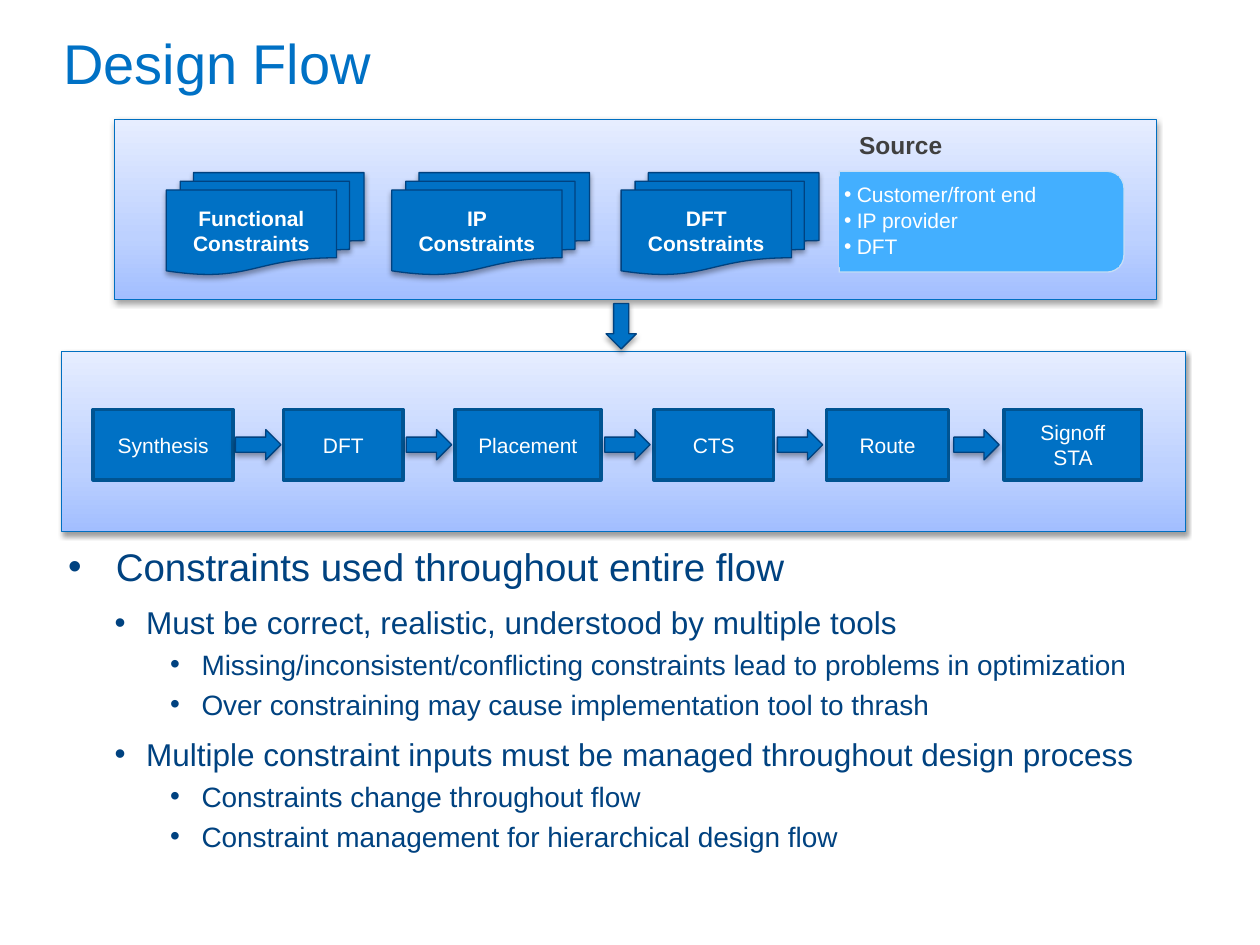
from lxml import etree
from pptx import Presentation
from pptx.dml.color import RGBColor
from pptx.enum.shapes import MSO_SHAPE
from pptx.enum.text import MSO_ANCHOR, PP_ALIGN
from pptx.oxml.ns import qn
from pptx.util import Inches, Pt

RECTANGLE = MSO_SHAPE.RECTANGLE
RIGHT_ARROW = MSO_SHAPE.RIGHT_ARROW
DOCUMENTS = MSO_SHAPE.FLOWCHART_MULTIDOCUMENT
ROUNDED_TOP = MSO_SHAPE.ROUND_2_SAME_RECTANGLE
TOP, MIDDLE = MSO_ANCHOR.TOP, MSO_ANCHOR.MIDDLE
LEFT, CENTER = PP_ALIGN.LEFT, PP_ALIGN.CENTER

FONT = "Arial"
COLORS = {
    "blue": "0071C5", "navy": "004280", "step_line": "005492",
    "panel_line": "006FC1", "sky": "43AFFF", "pale": "C6DEF5",
    "white": "FFFFFF", "gray": "404040", "black": "000000",
}
PANEL_GRADIENT = [(0, "A2BEFF"), (35, "BDD1FF"), (100, "E6EDFF")]

TITLE = "Design Flow"
PANELS = [(0.91, 0.95, 8.27, 1.43), (0.49, 2.79, 8.92, 1.43)]
STEPS = [
    (0.74, 1.11, ["Synthesis"]),
    (2.25, 0.95, ["DFT"]),
    (3.61, 1.16, ["Placement"]),
    (5.19, 0.95, ["CTS"]),
    (6.56, 0.97, ["Route"]),
    (7.97, 1.09, ["Signoff", "STA"]),
]
STEP_TOP, STEP_HEIGHT = 3.25, 0.56
ARROW_WIDTH, ARROW_HEIGHT = 0.36, 0.24
CONSTRAINTS = [
    (1.32, ["Functional Constraints"]),
    (3.11, ["IP", "Constraints"]),
    (4.93, ["DFT Constraints"]),
]
SOURCES = ["Customer/front end", "IP provider", "DFT"]
LEVELS = [
    {"size": 22, "margin": 0.38, "hanging": 0.38, "before": 12},
    {"size": 18, "margin": 0.62, "hanging": 0.25, "before": 8},
    {"size": 16, "margin": 1.06, "hanging": 0.25, "before": 3.7},
]
POINTS = [
    (0, "Constraints used throughout entire flow"),
    (1, "Must be correct, realistic, understood by multiple tools"),
    (2, "Missing/inconsistent/conflicting constraints lead to problems in optimization"),
    (2, "Over constraining may cause implementation tool to thrash"),
    (1, "Multiple constraint inputs must be managed throughout design process"),
    (2, "Constraints change throughout flow"),
    (2, "Constraint management for hierarchical design flow"),
]


def rgb(name):
    return RGBColor.from_string(COLORS[name])


def add_color(parent, value, alpha=None):
    color = etree.SubElement(parent, qn("a:srgbClr"), val=value)
    if alpha is not None:
        etree.SubElement(color, qn("a:alpha"), val=str(alpha * 1000))


def add_shadow(shape, alpha, distance):
    effects = shape._element.spPr.find(qn("a:effectLst"))
    shadow = etree.SubElement(
        effects, qn("a:outerShdw"), blurRad=str(Pt(3.1)), dist=str(Pt(distance)),
        dir="5400000", rotWithShape="0")
    add_color(shadow, COLORS["black"], alpha)


def add_shape(slide, kind, box, fill, line=None, width=0.75):
    shape = slide.shapes.add_shape(kind, *map(Inches, box))
    shape.shadow.inherit = False
    shape.fill.solid()
    shape.fill.fore_color.rgb = rgb(fill)
    if line:
        shape.line.color.rgb = rgb(line)
        shape.line.width = Pt(width)
    else:
        shape.line.fill.background()
    return shape


def add_panel(slide, box):
    panel = add_shape(slide, RECTANGLE, box, "white", "panel_line")
    panel.fill.gradient()
    panel.fill.gradient_angle = 90
    stops = panel._element.spPr.find(qn("a:gradFill")).find(qn("a:gsLst"))
    for stop in list(stops):
        stops.remove(stop)
    for position, value in PANEL_GRADIENT:
        stop = etree.SubElement(stops, qn("a:gs"), pos=str(position * 1000))
        add_color(stop, value)
    add_shadow(panel, 38, 1.6)


def add_raised(slide, kind, box):
    shape = add_shape(slide, kind, box, "blue", "navy")
    add_shadow(shape, 35, 1.8)
    return shape


def set_margins(frame, horizontal, vertical):
    frame.margin_left = frame.margin_right = Inches(horizontal)
    frame.margin_top = frame.margin_bottom = Inches(vertical)


def write_paragraph(frame, index, text, size, color, bold=False, align=LEFT):
    paragraph = frame.paragraphs[0] if index == 0 else frame.add_paragraph()
    paragraph.alignment = align
    run = paragraph.add_run()
    run.text = text
    run.font.name = FONT
    run.font.size = Pt(size)
    run.font.bold = bold
    run.font.color.rgb = rgb(color)
    return paragraph


def add_bullet(paragraph, margin, hanging):
    properties = paragraph._p.get_or_add_pPr()
    properties.set("marL", str(Inches(margin)))
    properties.set("indent", str(-Inches(hanging)))
    etree.SubElement(properties, qn("a:buFont"), typeface=FONT)
    etree.SubElement(properties, qn("a:buChar"), char="•")


def write_label(shape, lines, bold=False):
    shape.text_frame.vertical_anchor = MIDDLE
    for index, line in enumerate(lines):
        write_paragraph(shape.text_frame, index, line, 12, "white", bold, CENTER)


def add_title(slide):
    title = slide.shapes.title
    title.left, title.top, title.width, title.height = map(Inches, (0.5, 0.23, 9, 0.93))
    set_margins(title.text_frame, 0, 0)
    title.text_frame.vertical_anchor = TOP
    write_paragraph(title.text_frame, 0, TITLE, 32, "blue")


def add_points(slide):
    frame = slide.shapes.add_textbox(*map(Inches, (0.54, 4.31, 9, 2.75))).text_frame
    frame.word_wrap = True
    set_margins(frame, 0, 0)
    for index, (depth, text) in enumerate(POINTS):
        level = LEVELS[depth]
        paragraph = write_paragraph(frame, index, text, level["size"], "navy")
        paragraph.level = depth
        add_bullet(paragraph, level["margin"], level["hanging"])
        if index:
            paragraph.space_before = Pt(level["before"])


def add_flow(slide):
    for left, width, lines in STEPS:
        step = add_shape(slide, RECTANGLE, (left, STEP_TOP, width, STEP_HEIGHT),
                         "blue", "step_line", 2)
        write_label(step, lines)
    arrow_top = STEP_TOP + (STEP_HEIGHT - ARROW_HEIGHT) / 2
    for (left, width, _), (next_left, _, _) in zip(STEPS, STEPS[1:]):
        arrow_left = (left + width + next_left - ARROW_WIDTH) / 2
        add_raised(slide, RIGHT_ARROW, (arrow_left, arrow_top, ARROW_WIDTH, ARROW_HEIGHT))


def add_sources(slide):
    card = add_shape(slide, ROUNDED_TOP, (7.39, 0.63, 0.8, 2.26), "sky", "pale")
    card.rotation = 90
    listing = add_shape(slide, RECTANGLE, (6.66, 1.4, 2.22, 0.72), "sky")
    frame = listing.text_frame
    frame.vertical_anchor = MIDDLE
    set_margins(frame, 0.04, 0.02)
    for index, source in enumerate(SOURCES):
        paragraph = write_paragraph(frame, index, source, 12, "white")
        add_bullet(paragraph, 0.1, 0.1)
        paragraph.line_spacing = 0.9
        paragraph.space_after = Pt(1.8)
    heading = slide.shapes.add_textbox(*map(Inches, (6.72, 0.98, 0.94, 0.34)))
    write_paragraph(heading.text_frame, 0, "Source", 14, "gray", True)


def main():
    presentation = Presentation()
    presentation.slide_width, presentation.slide_height = Inches(10), Inches(7.5)
    slide = presentation.slides.add_slide(presentation.slide_layouts[5])
    add_title(slide)
    add_points(slide)
    for box in PANELS:
        add_panel(slide, box)
    add_flow(slide)
    for left, lines in CONSTRAINTS:
        write_label(add_raised(slide, DOCUMENTS, (left, 1.37, 1.57, 0.81)), lines, True)
    add_sources(slide)
    down_arrow = add_raised(slide, RIGHT_ARROW, (4.75, 2.47, ARROW_WIDTH, ARROW_HEIGHT))
    down_arrow.rotation = 90
    presentation.save("out.pptx")


if __name__ == "__main__":
    main()
